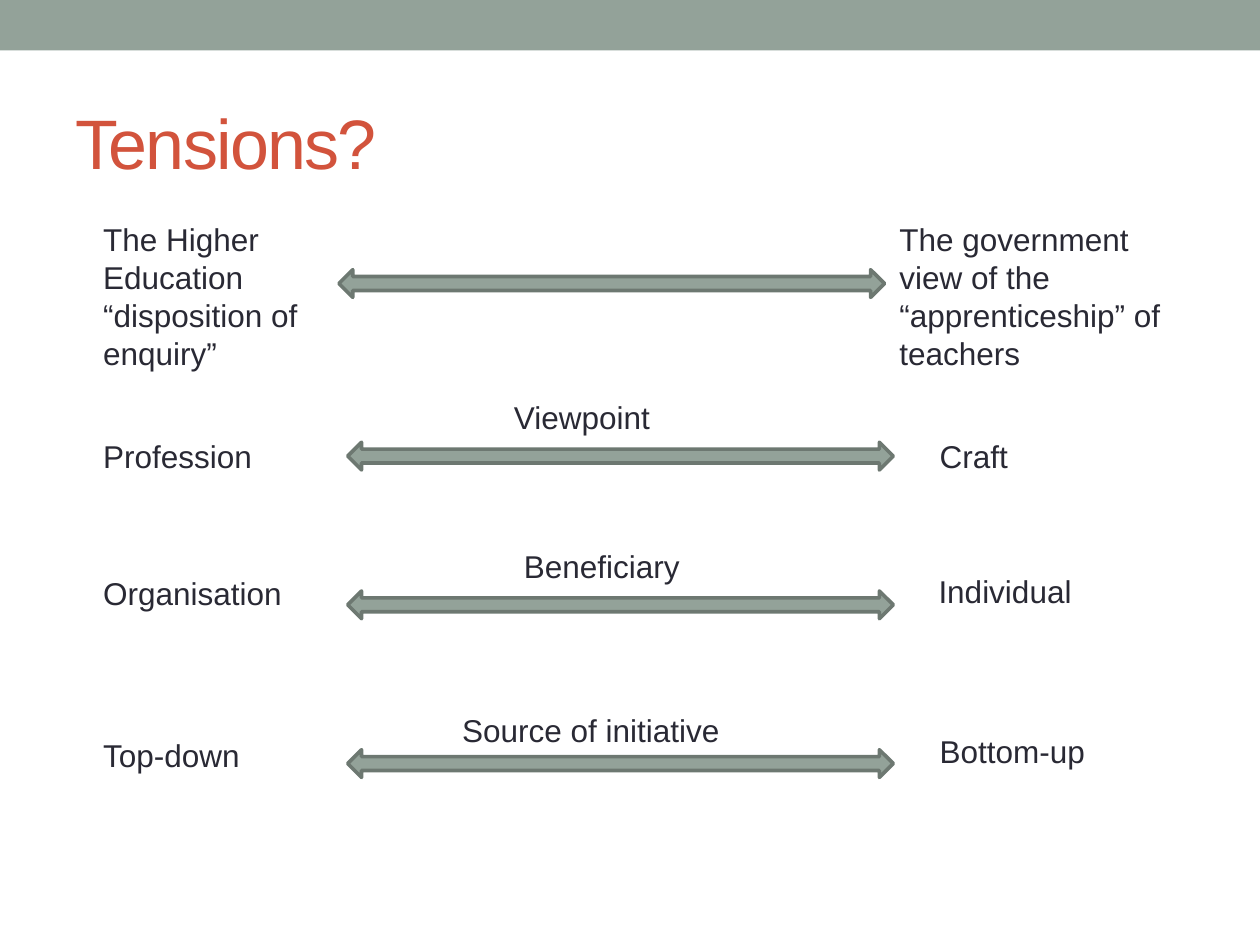
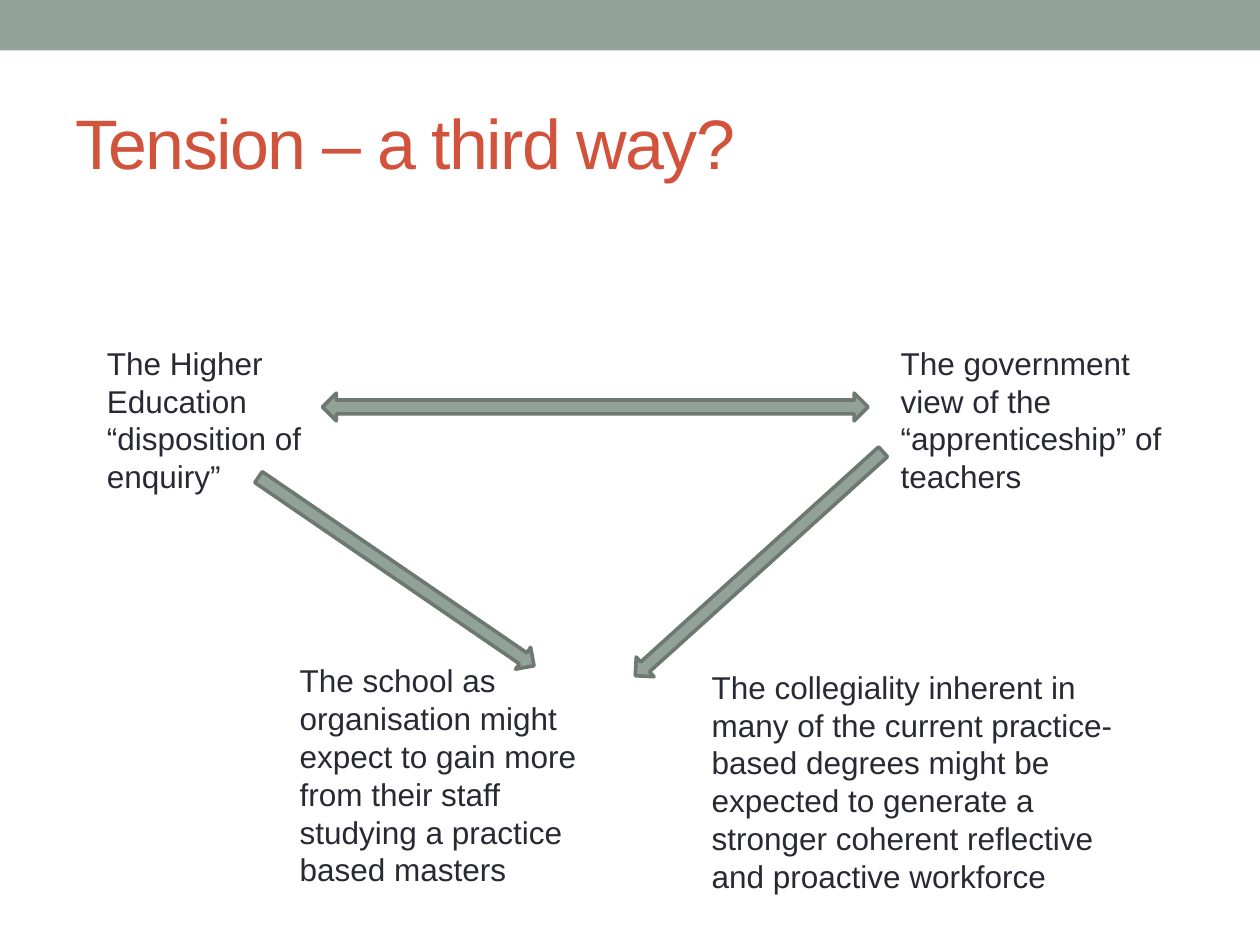
from pptx import Presentation
from pptx.dml.color import RGBColor
from pptx.enum.shapes import MSO_SHAPE as Preset
from pptx.enum.text import MSO_ANCHOR as Anchor, MSO_AUTO_SIZE as AutoSize, PP_ALIGN as Align
from pptx.util import Inches, Pt

# Shared look
color = RGBColor.from_string
SAGE, SAGE_DARK, RED, INK = "93A299", "6D7871", "D2533C", "292934"
TITLE_FONT = {"name": "Arial", "size": Pt(40), "bold": False}
BODY_FONT = {"name": "Arial", "size": Pt(18)}
TITLE_FRAME = {"vertical_anchor": Anchor.MIDDLE, "auto_size": AutoSize.NONE, "word_wrap": True}
TITLE_PLACE = {"left": Inches(0.5), "top": Inches(0.58), "width": Inches(9), "height": Inches(1.08)}
ENQUIRY = "The Higher Education “disposition of enquiry”"
APPRENTICESHIP = "The government view of the “apprenticeship” of teachers"


def add_label(group, text, left, top, width, height=0.4):
    label = group.shapes.add_textbox(Inches(left), Inches(top), Inches(width), Inches(height))
    label.text_frame.word_wrap = True
    label.text_frame.auto_size = AutoSize.SHAPE_TO_FIT_TEXT
    run = label.text_frame.paragraphs[0].add_run()
    run.text = text
    for name, value in BODY_FONT.items():
        setattr(run.font, name, value)
    run.font.color.rgb = color(INK)


def add_arrow(group, preset, left, top, width, height, rotation=0):
    arrow = group.shapes.add_shape(preset, Inches(left), Inches(top), Inches(width), Inches(height))
    arrow.rotation = rotation
    arrow.shadow.inherit = False
    arrow.fill.solid()
    arrow.fill.fore_color.rgb = color(SAGE)
    arrow.line.color.rgb = color(SAGE_DARK)
    arrow.line.width = Pt(2.08)


presentation = Presentation()
presentation.slide_width, presentation.slide_height = Inches(10), Inches(7.5)
layout = presentation.slide_layouts[5]

# Titles
slides = []
for heading in ("Tensions?", "Tension – a third way?"):
    slide = presentation.slides.add_slide(layout)
    title = slide.shapes.title
    for name, value in TITLE_PLACE.items():
        setattr(title, name, value)
    for name, value in TITLE_FRAME.items():
        setattr(title.text_frame, name, value)
    paragraph = title.text_frame.paragraphs[0]
    paragraph.alignment = Align.LEFT
    run = paragraph.add_run()
    run.text = heading
    for name, value in TITLE_FONT.items():
        setattr(run.font, name, value)
    run.font.color.rgb = color(RED)
    run.font._element.set("spc", "-100")
    slides.append(slide)
tensions, third_way = slides

# Top band, moved to the layout so that both slides share it
band = tensions.shapes.add_shape(Preset.RECTANGLE, 0, 0, Inches(10), Inches(0.4))
band.shadow.inherit = False
band.fill.solid()
band.fill.fore_color.rgb = color(SAGE)
band.line.fill.background()
layout.shapes.element.insert(2, band._element)

# The opposing views on both slides: top, left text, right text, arrow left
for slide, top, left, right, arrow_left in (
    (tensions, 1.7, 0.72, 7.04, 2.69),
    (third_way, 2.68, 0.75, 7.05, 2.56),
):
    group = slide.shapes.add_group_shape()
    add_label(group, ENQUIRY, left, top, 2.28, 1.31)
    add_label(group, APPRENTICESHIP, right, top, 2.5, 1.31)
    add_arrow(group, Preset.LEFT_RIGHT_ARROW, arrow_left, top + 0.44, 4.33, 0.22)

# Slide 1: one scale per row, each label as text, left, top, width
scales = (
    (3.51, ("Profession", 0.72, 3.42, 1.76), ("Viewpoint", 3.98, 3.11, 1.89),
     ("Craft", 7.36, 3.42, 1.89)),
    (4.69, ("Organisation", 0.72, 4.51, 1.76), ("Beneficiary", 4.06, 4.29, 1.73),
     ("Individual", 7.35, 4.49, 1.89)),
    (5.95, ("Top-down", 0.72, 5.79, 1.76), ("Source of initiative", 3.57, 5.59, 2.61),
     ("Bottom-up", 7.36, 5.76, 1.65)),
)
for arrow_top, *labels in scales:
    group = tensions.shapes.add_group_shape()
    add_arrow(group, Preset.LEFT_RIGHT_ARROW, 2.76, arrow_top, 4.33, 0.22)
    for label in labels:
        add_label(group, *label)

# Slide 2: outcomes, each with an arrow leading down to it
outcomes = (
    (("The school as organisation might expect to gain more from their staff "
      "studying a practice based masters", 2.28, 5.2, 2.5, 1.92), (3.04, 3.21, 0.21, 2.65, 304.4)),
    (("The collegiality inherent in many of the current practice-based degrees might be "
      "expected to generate a stronger coherent reflective and proactive workforce",
      5.55, 5.25, 3.46, 1.92), (5.92, 3.15, 0.21, 2.65, 47.9)),
)
for label, arrow in outcomes:
    group = third_way.shapes.add_group_shape()
    add_label(group, *label)
    add_arrow(group, Preset.DOWN_ARROW, *arrow)

presentation.save("out.pptx")
